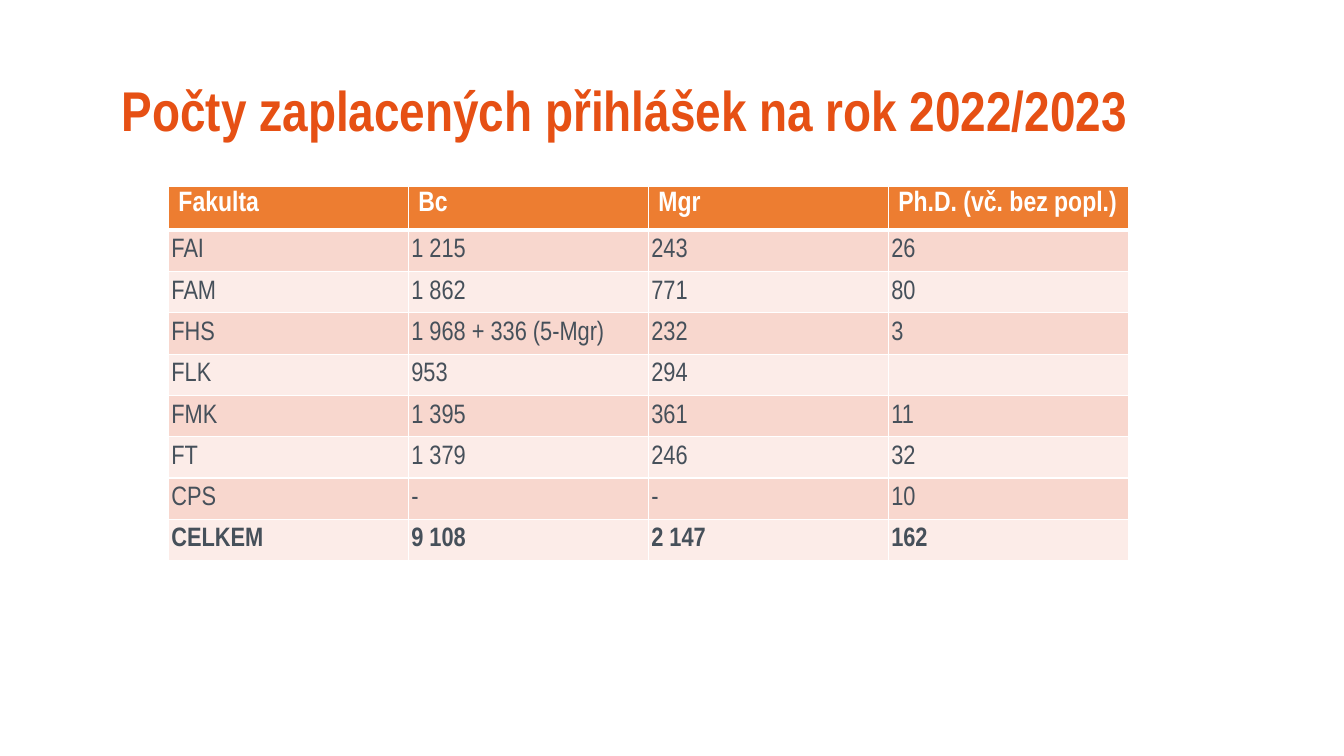
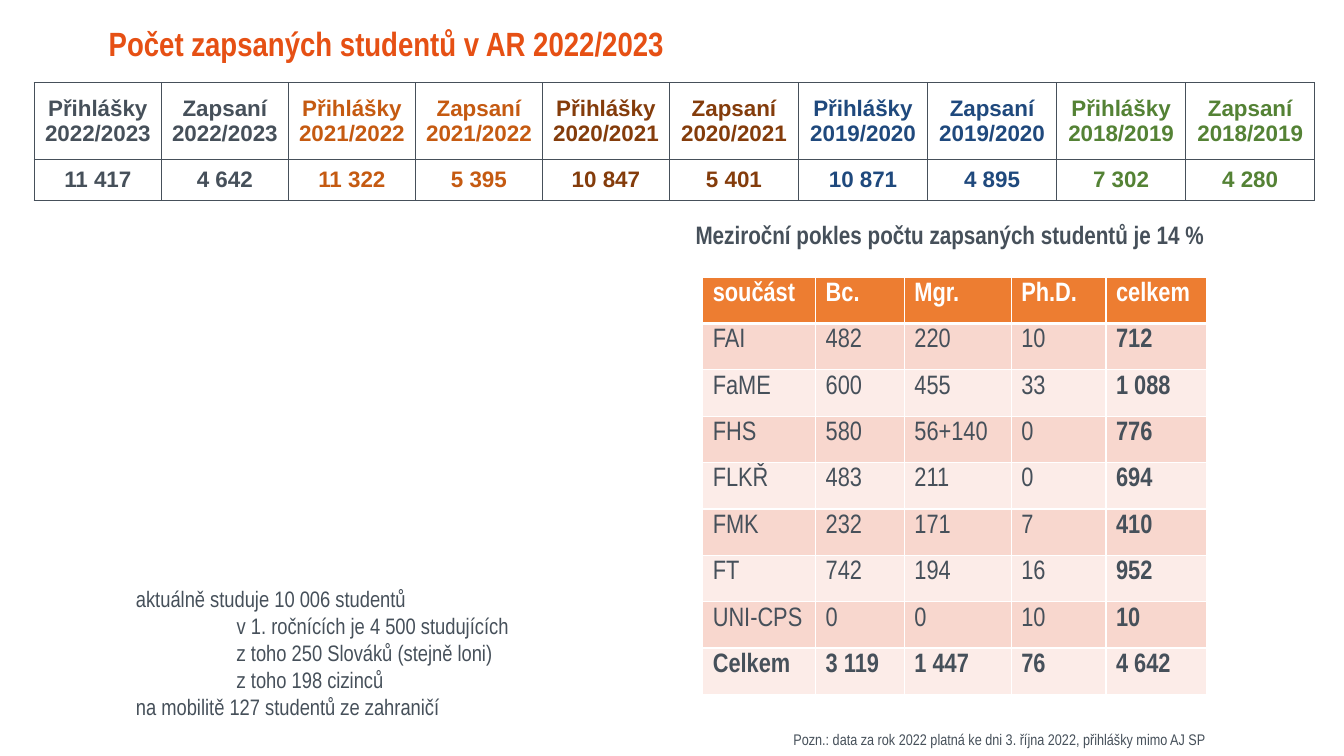
from pptx import Presentation
from pptx.dml.color import RGBColor as RGB
from pptx.enum.text import MSO_ANCHOR as Anchor, PP_ALIGN as Align
from pptx.oxml import parse_xml
from pptx.oxml.ns import nsdecls
from pptx.util import Inches, Pt

ORANGE = RGB(0xE6, 0x50, 0x14)
GREY = RGB(0x46, 0x50, 0x5A)
WHITE = RGB(0xFF, 0xFF, 0xFF)
HEAD = RGB(0xED, 0x7D, 0x31)
BANDS = (RGB(0xF8, 0xD7, 0xCE), RGB(0xFC, 0xEC, 0xE8))
RUST = RGB(0xC5, 0x5A, 0x11)
BROWN = RGB(0x84, 0x3C, 0x0B)
NAVY = RGB(0x1F, 0x49, 0x7D)
GREEN = RGB(0x54, 0x82, 0x35)
NARROW = "Arial Narrow"

PAID = (
    ("Fakulta", "Bc", "Mgr", "Ph.D. (vč. bez popl.)"),
    ("FAI", "1 215", "243", "26"),
    ("FAM", "1 862", "771", "80"),
    ("FHS", "1 968 + 336 (5-Mgr)", "232", "3"),
    ("FLK", "953", "294", ""),
    ("FMK", "1 395", "361", "11"),
    ("FT", "1 379", "246", "32"),
    ("CPS", "-", "-", "10"),
    ("CELKEM", "9 108", "2 147", "162"),
)
ENROLLED = (
    ("součást", "Bc.", "Mgr.", "Ph.D.", "celkem"),
    ("FAI", "482", "220", "10", "712"),
    ("FaME", "600", "455", "33", "1 088"),
    ("FHS", "580", "56+140", "0", "776"),
    ("FLKŘ", "483", "211", "0", "694"),
    ("FMK", "232", "171", "7", "410"),
    ("FT", "742", "194", "16", "952"),
    ("UNI-CPS", "0", "0", "10", "10"),
    ("Celkem", "3 119", "1 447", "76", "4 642"),
)
YEARS = (
    ("2022/2023", "11 417", "4 642", GREY),
    ("2021/2022", "11 322", "5 395", RUST),
    ("2020/2021", "10 847", "5 401", BROWN),
    ("2019/2020", "10 871", "4 895", NAVY),
    ("2018/2019", "7 302", "4 280", GREEN),
)


class Deck:
    """Holds the shared style and the current slide."""

    def __init__(self):
        self.prs = Presentation()
        self.prs.slide_width = Inches(13.33)
        self.prs.slide_height = Inches(7.5)
        self.slide = None

    def page(self):
        self.slide = self.prs.slides.add_slide(self.prs.slide_layouts[6])

    def label(self, para, text, **style):
        run = para.add_run()
        run.text = text
        look = {"name": NARROW, "size": 19, "bold": False, "color": GREY} | style
        run.font.color.rgb = look.pop("color")
        look["size"] = Pt(look["size"])
        for key, value in look.items():
            setattr(run.font, key, value)

    def text(self, at, lines, wrap=True, **style):
        box = self.slide.shapes.add_textbox(*map(Inches, at))
        frame = box.text_frame
        frame.word_wrap = wrap
        for i, (line, indent) in enumerate(lines):
            para = frame.add_paragraph() if i else frame.paragraphs[0]
            if indent:
                para._p.get_or_add_pPr().set("marL", str(Inches(indent)))
            self.label(para, line, **style)
        return frame

    def title(self, at, text, size):
        frame = self.text(at, [(text, 0)], size=size, bold=True, color=ORANGE)
        frame.vertical_anchor = Anchor.MIDDLE
        frame.paragraphs[0].line_spacing = 0.9

    def edge(self, cell, color, top=1, base=1):
        sides = {"L": 1, "R": 1, "T": top, "B": base}
        for i, (side, width) in enumerate(sides.items()):
            line = parse_xml(
                f'<a:ln{side} {nsdecls("a")} w="{Pt(width)}"><a:solidFill>'
                f'<a:srgbClr val="{color}"/></a:solidFill></a:ln{side}>')
            cell._tc.get_or_add_tcPr().insert(i, line)

    def table(self, left, top, widths, heights):
        frame = self.slide.shapes.add_table(
            len(heights), len(widths), Inches(left), Inches(top),
            Inches(sum(widths)), Inches(sum(heights)))
        grid = frame.table
        grid.horz_banding = False
        for parts, key, sizes in ((grid.columns, "width", widths),
                                  (grid.rows, "height", heights)):
            for part, size in zip(parts, sizes):
                setattr(part, key, Inches(size))
        return grid

    def pad(self, cell, side, end):
        cell.vertical_anchor = Anchor.MIDDLE
        sizes = {"left": side, "right": side, "top": end, "bottom": end}
        for name, size in sizes.items():
            setattr(cell, f"margin_{name}", Inches(size))

    def bands(self, at, rows, widths, height, size=19, tight=False, total=None):
        grid = self.table(*at, widths, [height] * len(rows))
        for r, row in enumerate(rows):
            for c, text in enumerate(row):
                cell = grid.cell(r, c)
                cell.fill.solid()
                cell.fill.fore_color.rgb = BANDS[(r - 1) % 2] if r else HEAD
                self.edge(cell, WHITE, 3 if r == 1 else 1, 1 if r else 3)
                if tight and r and text:
                    self.pad(cell, 0.03, 0.02)
                if text:
                    self.label(cell.text_frame.paragraphs[0], text,
                               size=19 if r else size,
                               bold=r in (0, len(rows) - 1) or c == total,
                               color=GREY if r else WHITE)

    def years(self, at, data):
        grid = self.table(*at, [1.26] * 5 + [1.28] * 5, (0.76, 0.41))
        for i, (year, sent, came, color) in enumerate(data):
            pairs = ((f"Přihlášky {year}", sent), (f"Zapsaní {year}", came))
            for c, pair in enumerate(pairs, 2 * i):
                for r, text in enumerate(pair):
                    cell = grid.cell(r, c)
                    cell.fill.background()
                    self.edge(cell, GREY)
                    self.pad(cell, 0.07, 0)
                    para = cell.text_frame.paragraphs[0]
                    para.alignment = Align.CENTER
                    self.label(para, text, name="Arial", size=16, bold=True,
                               color=color)


def main():
    deck = Deck()
    deck.page()
    deck.title((1.11, 0.4, 11.31, 1.45),
               "Počty zaplacených přihlášek na rok 2022/2023", 40)
    deck.bands((1.67, 1.85), PAID, [2.38] * 4, 0.41, size=20, tight=True)

    deck.page()
    deck.title((0.98, 0.19, 11.31, 0.53),
               "Počet zapsaných studentů v AR 2022/2023", 24)
    deck.text((7.77, 7.19, 4.32, 0.29), [
        ("Pozn.: data za rok 2022 platná ke dni 3. října 2022, přihlášky mimo AJ SP", 0),
    ], wrap=False, size=11)
    deck.bands((6.97, 2.75), ENROLLED, (1.12, 0.88, 1.06, 0.94, 1), 0.46, total=4)
    deck.years((0.34, 0.82), YEARS)
    deck.text((6.8, 2.13, 5.48, 0.4), [
        ("Meziroční pokles počtu zapsaných studentů je 14 %", 0),
    ], size=18, bold=True)
    deck.text((1.25, 5.76, 4.67, 1.72), [
        ("aktuálně studuje 10 006 studentů", 0),
        ("v 1. ročnících je 4 500 studujících", 1),
        ("z toho 250 Slováků (stejně loni)", 1),
        ("z toho 198 cizinců", 1),
        ("na mobilitě 127 studentů ze zahraničí", 0),
    ], size=16)
    deck.prs.save("out.pptx")


if __name__ == "__main__":
    main()
